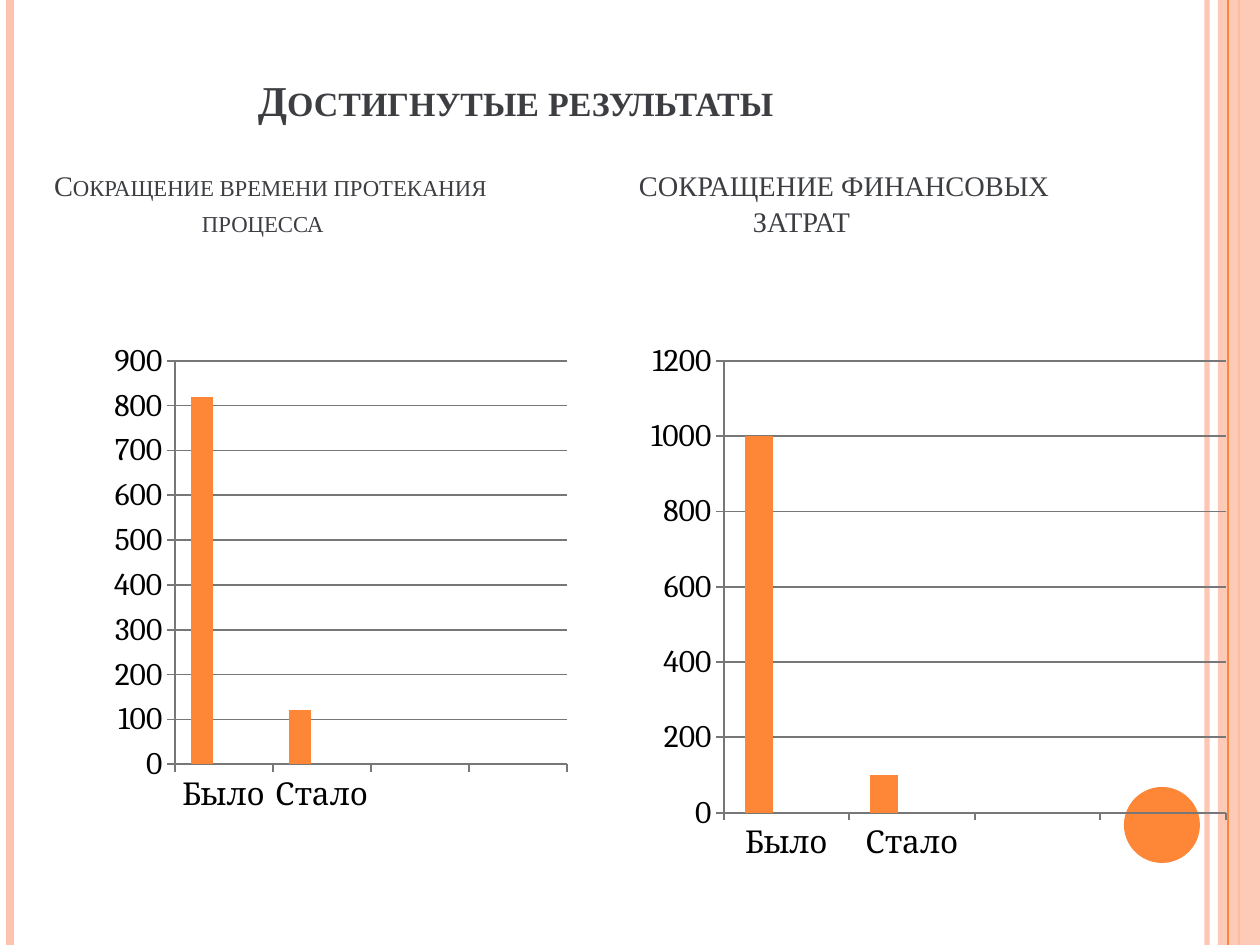
from dataclasses import dataclass

from lxml import etree
from pptx import Presentation
from pptx.chart.data import CategoryChartData
from pptx.dml.color import RGBColor
from pptx.enum.chart import XL_CHART_TYPE, XL_TICK_MARK
from pptx.enum.shapes import MSO_CONNECTOR, MSO_SHAPE
from pptx.oxml.ns import qn
from pptx.util import Emu, Pt

COLUMNS = XL_CHART_TYPE.COLUMN_CLUSTERED
STRAIGHT = MSO_CONNECTOR.STRAIGHT
RECT, OVAL = MSO_SHAPE.RECTANGLE, MSO_SHAPE.OVAL
TICK_OUT = XL_TICK_MARK.OUTSIDE

WIDTH, HEIGHT = 1260, 945
PX_PER_INCH = 126


@dataclass(frozen=True)
class Theme:
    orange: str = "FE8637"
    peach: str = "FEC3AE"
    text: str = "3C3E42"
    black: str = "000000"
    axis: str = "777777"
    series: tuple[str, ...] = ("FE8637", "7598D9", "B32C16")
    text_font: str = "Times New Roman"
    chart_font: str = "Cambria"
    title_pt: float = 24.3
    subtitle_pt: float = 16.2
    chart_pt: float = 18
    axis_pt: float = 1


@dataclass(frozen=True)
class Stripe:
    x: int
    color: str
    weight: float
    opacity: int = 100


@dataclass(frozen=True)
class Line:
    text: str
    indent: int = 0


@dataclass(frozen=True)
class Caption:
    x: int
    y: int
    w: int
    h: int
    size: float
    lines: tuple[Line, ...]
    bold: bool = False
    small_caps: bool = False


@dataclass(frozen=True)
class ColumnChart:
    x: int
    y: int
    w: int
    h: int
    values: tuple[int, int]
    top: int
    step: int
    plot: tuple[float, float, float, float]  # x, y, w, h as shares of the chart


T = Theme()

STRIPES = (
    Stripe(1207, T.peach, 3, 93),
    Stripe(10, T.peach, 4.5),
    Stripe(1239, T.orange, 1.5),
)
INNER_STRIPE = Stripe(1228, T.orange, 0.75)

CAPTIONS = (
    Caption(258, 74, 640, 52, T.title_pt, (Line("Достигнутые результаты"),),
            bold=True, small_caps=True),
    Caption(54, 168, 520, 70, T.subtitle_pt,
            (Line("Сокращение времени протекания"), Line("процесса", 148)),
            small_caps=True),
    Caption(639, 168, 520, 70, T.subtitle_pt,
            (Line("СОКРАЩЕНИЕ ФИНАНСОВЫХ"), Line("ЗАТРАТ", 114))),
)

CATEGORIES = ("Было", "Стало", "", "")
CHARTS = (
    ColumnChart(42, 334, 577, 538, (820, 120), 900, 100, (0.23, 0.05, 0.68, 0.75)),
    ColumnChart(640, 334, 598, 538, (1000, 100), 1200, 200, (0.14, 0.05, 0.84, 0.84)),
)


def px(n: int) -> Emu:
    return Emu(round(n * 914400 / PX_PER_INCH))


def rgb(color: str) -> RGBColor:
    return RGBColor.from_string(color)


def set_opacity(sp, percent: int) -> None:
    if percent < 100:
        clr = next(sp._element.spPr.iter(qn("a:srgbClr")))
        etree.SubElement(clr, qn("a:alpha")).set("val", str(percent * 1000))


def draw_stripe(s, stripe: Stripe) -> None:
    sp = s.shapes.add_connector(STRAIGHT, px(stripe.x), 0, px(stripe.x), px(HEIGHT))
    sp.line.color.rgb = rgb(stripe.color)
    sp.line.width = Pt(stripe.weight)
    set_opacity(sp, stripe.opacity)
    etree.SubElement(sp._element.spPr, qn("a:effectLst"))


def draw_shape(s, kind, x: int, y: int, w: int, h: int, color: str,
               opacity: int = 100) -> None:
    sp = s.shapes.add_shape(kind, px(x), px(y), px(w), px(h))
    sp.shadow.inherit = False
    sp.fill.solid()
    sp.fill.fore_color.rgb = rgb(color)
    sp.line.fill.background()
    set_opacity(sp, opacity)


def draw_caption(s, c: Caption) -> None:
    tf = s.shapes.add_textbox(px(c.x), px(c.y), px(c.w), px(c.h)).text_frame
    tf.word_wrap = True
    tf.margin_left = tf.margin_right = tf.margin_top = tf.margin_bottom = 0
    for i, line in enumerate(c.lines):
        p = tf.add_paragraph() if i else tf.paragraphs[0]
        if i:
            p.space_before = Pt(1)
        p._p.get_or_add_pPr().set("marL", str(px(line.indent)))
        r = p.add_run()
        r.text = line.text
        r.font.name, r.font.size, r.font.bold = T.text_font, Pt(c.size), c.bold
        r.font.color.rgb = rgb(T.text)
        if c.small_caps:
            r._r.get_or_add_rPr().set("cap", "small")


def style_line(line) -> None:
    line.color.rgb = rgb(T.axis)
    line.width = Pt(T.axis_pt)


def set_plot_area(chart, plot: tuple[float, float, float, float]) -> None:
    area = chart._chartSpace.chart.plotArea
    for old in area.findall(qn("c:layout")):
        area.remove(old)
    layout = etree.Element(qn("c:layout"))
    manual = etree.SubElement(layout, qn("c:manualLayout"))
    settings = [("layoutTarget", "inner"), ("xMode", "edge"), ("yMode", "edge")]
    for tag, val in settings + list(zip("xywh", plot)):
        etree.SubElement(manual, qn(f"c:{tag}")).set("val", str(val))
    area.insert(0, layout)


def draw_chart(s, c: ColumnChart) -> None:
    data = CategoryChartData()
    data.categories = CATEGORIES
    empty = (None,) * len(CATEGORIES)
    for i in range(len(T.series)):
        data.add_series(f"Series {i + 1}", empty if i else c.values + (None, None))
    chart = s.shapes.add_chart(COLUMNS, px(c.x), px(c.y), px(c.w), px(c.h), data).chart
    chart.has_legend = chart.has_title = False
    chart.font.name, chart.font.size = T.chart_font, Pt(T.chart_pt)
    chart.font.color.rgb = rgb(T.black)

    plot = chart.plots[0]
    plot.vary_by_categories = False
    plot.gap_width, plot.overlap = 150, 0
    for series, color in zip(plot.series, T.series):
        series.format.fill.solid()
        series.format.fill.fore_color.rgb = rgb(color)

    for axis in (chart.category_axis, chart.value_axis):
        axis.major_tick_mark = TICK_OUT
        style_line(axis.format.line)
    axis = chart.value_axis
    axis.minimum_scale, axis.maximum_scale, axis.major_unit = 0, c.top, c.step
    axis.has_major_gridlines = True
    style_line(axis.major_gridlines.format.line)
    set_plot_area(chart, c.plot)


def main() -> None:
    prs = Presentation()
    prs.slide_width, prs.slide_height = px(WIDTH), px(HEIGHT)
    s = prs.slides.add_slide(prs.slide_layouts[6])

    # Side stripes and corner circle
    for stripe in STRIPES:
        draw_stripe(s, stripe)
    draw_shape(s, RECT, 1218, 0, 42, HEIGHT, T.peach, 87)
    draw_stripe(s, INNER_STRIPE)
    draw_shape(s, OVAL, 1124, 787, 76, 76, T.orange)

    # Title and chart headings
    for caption in CAPTIONS:
        draw_caption(s, caption)

    # Before and after charts
    for chart in CHARTS:
        draw_chart(s, chart)

    prs.save("out.pptx")


if __name__ == "__main__":
    main()
